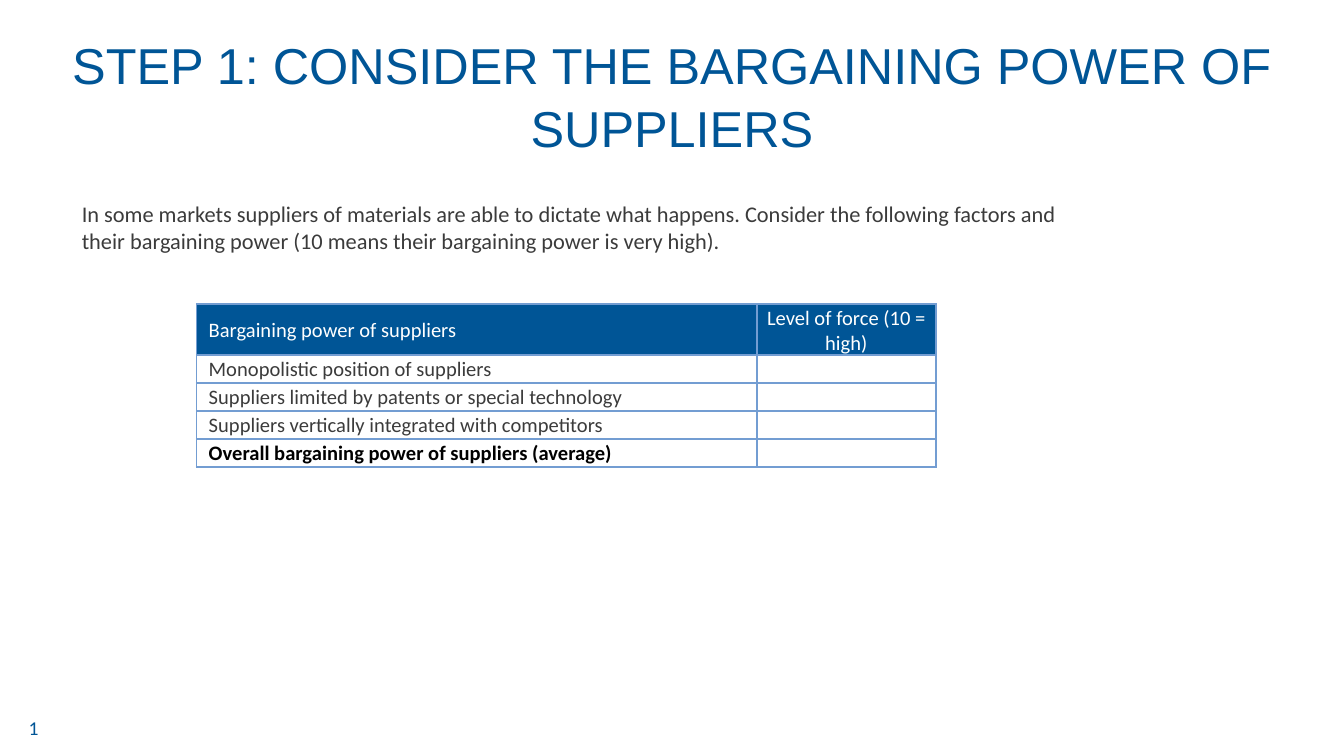
from dataclasses import dataclass

from lxml import etree
from pptx import Presentation
from pptx.dml.color import RGBColor
from pptx.enum.text import MSO_ANCHOR, PP_ALIGN
from pptx.oxml.ns import qn
from pptx.util import Pt

LEFT, CENTER = PP_ALIGN.LEFT, PP_ALIGN.CENTER
TOP, MIDDLE, BOTTOM = MSO_ANCHOR.TOP, MSO_ANCHOR.MIDDLE, MSO_ANCHOR.BOTTOM

BLUE = RGBColor(0x00, 0x55, 0x96)
BORDER = RGBColor(0x73, 0x9D, 0xD2)
GRAY = RGBColor(0x3B, 0x3B, 0x3B)
BLACK = RGBColor(0x00, 0x00, 0x00)
WHITE = RGBColor(0xFF, 0xFF, 0xFF)

COLUMN_WIDTHS = (417 * 0.72, 133 * 0.72)
HEADER_HEIGHT = 27
ROW_HEIGHT = 15


@dataclass(frozen=True)
class TextStyle:
    size: float
    color: RGBColor
    font: str = "Calibri"
    align: PP_ALIGN = LEFT
    bold: bool = False


@dataclass(frozen=True)
class Factor:
    label: str
    style: TextStyle


FACTOR_STYLE = TextStyle(11, GRAY)
TOTAL_STYLE = TextStyle(11, BLACK, bold=True)
FACTORS = (
    Factor("Monopolistic position of suppliers", FACTOR_STYLE),
    Factor("Suppliers limited by patents or special technology", FACTOR_STYLE),
    Factor("Suppliers vertically integrated with competitors", FACTOR_STYLE),
    Factor("Overall bargaining power of suppliers (average)", TOTAL_STYLE),
)


def write_text(text_frame, text: str, style: TextStyle) -> None:
    paragraph = text_frame.paragraphs[0]
    paragraph.alignment = style.align
    paragraph.font.size = Pt(style.size)
    if not text:
        return
    run = paragraph.add_run()
    run.text = text
    run.font.name = style.font
    run.font.size = Pt(style.size)
    run.font.bold = style.bold
    run.font.color.rgb = style.color


def place(shape, left: float, top: float, width: float, height: float) -> None:
    shape.left, shape.top = Pt(left), Pt(top)
    shape.width, shape.height = Pt(width), Pt(height)


def clear_margins(text_frame) -> None:
    text_frame.margin_left = text_frame.margin_right = 0
    text_frame.margin_top = text_frame.margin_bottom = 0


def add_borders(cell) -> None:
    properties = cell._tc.get_or_add_tcPr()
    for index, side in enumerate(("a:lnL", "a:lnR", "a:lnT", "a:lnB")):
        line = etree.Element(qn(side), w=str(Pt(1)))
        fill = etree.SubElement(line, qn("a:solidFill"))
        etree.SubElement(fill, qn("a:srgbClr"), val=str(BORDER))
        properties.insert(index, line)


def fill_cell(cell, text: str, style: TextStyle, anchor: MSO_ANCHOR,
              background: RGBColor) -> None:
    cell.margin_left = Pt(6.5 if style.align == LEFT else 0.72)
    cell.margin_right = cell.margin_top = Pt(0.72)
    cell.margin_bottom = 0
    cell.vertical_anchor = anchor
    cell.fill.solid()
    cell.fill.fore_color.rgb = background
    write_text(cell.text_frame, text, style)
    add_borders(cell)


def add_factor_table(slide) -> None:
    height = HEADER_HEIGHT + ROW_HEIGHT * len(FACTORS)
    frame = slide.shapes.add_table(len(FACTORS) + 1, len(COLUMN_WIDTHS), Pt(105.3),
                                   Pt(162.9), Pt(sum(COLUMN_WIDTHS)), Pt(height))
    table = frame.table
    for column, width in zip(table.columns, COLUMN_WIDTHS):
        column.width = Pt(width)
    for index, row in enumerate(table.rows):
        row.height = Pt(ROW_HEIGHT if index else HEADER_HEIGHT)
    fill_cell(table.cell(0, 0), "Bargaining power of suppliers",
              TextStyle(11, WHITE), MIDDLE, BLUE)
    fill_cell(table.cell(0, 1), "Level of force (10 = high)",
              TextStyle(11, WHITE, align=CENTER), BOTTOM, BLUE)
    for index, factor in enumerate(FACTORS, start=1):
        fill_cell(table.cell(index, 0), factor.label, factor.style, MIDDLE, WHITE)
        fill_cell(table.cell(index, 1), "", factor.style, MIDDLE, WHITE)


def add_title(slide) -> None:
    title = slide.shapes.title
    place(title, 36, 16.6, 648, 67.7)
    clear_margins(title.text_frame)
    title.text_frame.word_wrap = True
    title.text_frame.vertical_anchor = MIDDLE
    write_text(title.text_frame, "STEP 1: CONSIDER THE BARGAINING POWER OF SUPPLIERS",
               TextStyle(27, BLUE, "Arial", CENTER))
    title.text_frame.paragraphs[0].line_spacing = 1.05


def add_text_box(slide, left: float, top: float, width: float, height: float,
                 text: str, style: TextStyle):
    box = slide.shapes.add_textbox(Pt(left), Pt(top), Pt(width), Pt(height))
    box.text_frame.word_wrap = True
    box.text_frame.vertical_anchor = TOP
    write_text(box.text_frame, text, style)
    return box


def main() -> None:
    presentation = Presentation()
    presentation.slide_width, presentation.slide_height = Pt(720), Pt(405)
    slide = presentation.slides.add_slide(presentation.slide_layouts[5])
    add_title(slide)
    add_text_box(slide, 36.7, 103.7, 550, 36,
                 "In some markets suppliers of materials are able to dictate what happens. "
                 "Consider the following factors and their bargaining power "
                 "(10 means their bargaining power is very high).",
                 TextStyle(12, GRAY))
    add_factor_table(slide)
    number = add_text_box(slide, 7.2, 383.8, 21.6, 10.8, "1",
                          TextStyle(10.5, BLUE, align=CENTER))
    clear_margins(number.text_frame)
    presentation.save("out.pptx")


if __name__ == "__main__":
    main()
